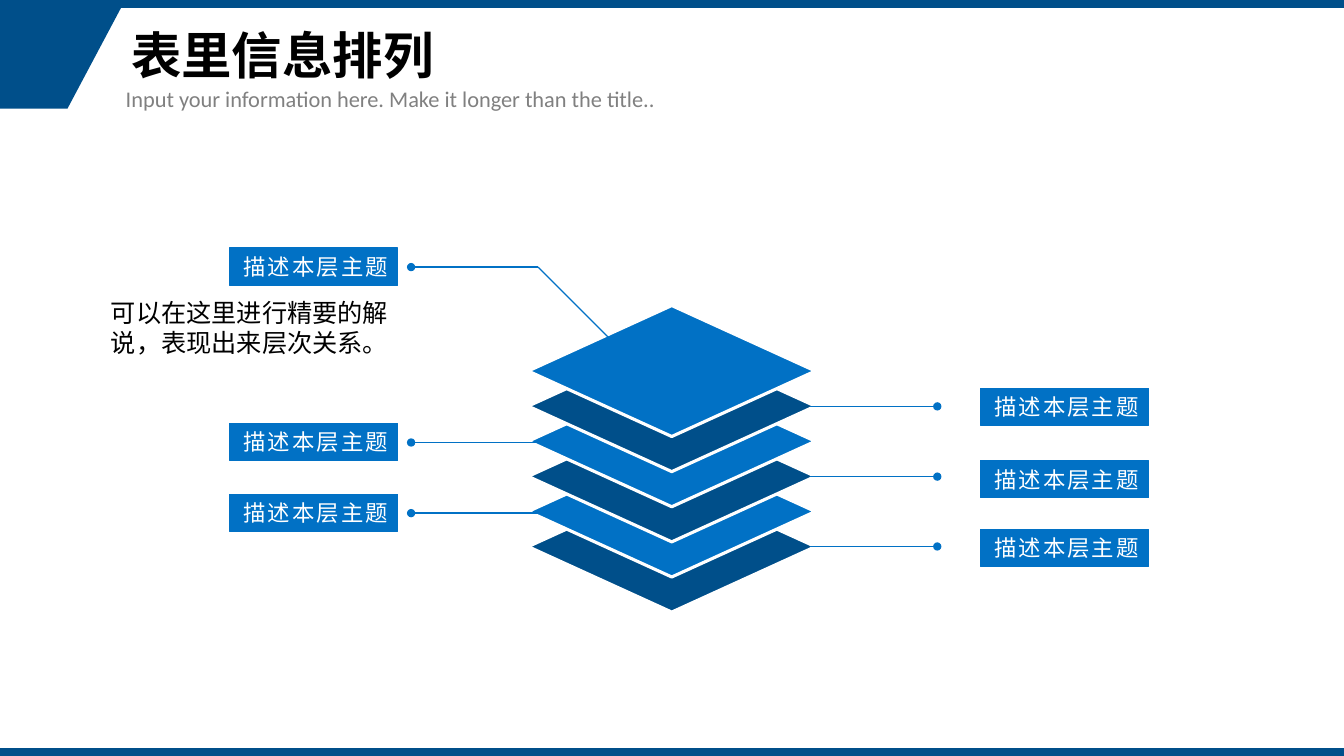
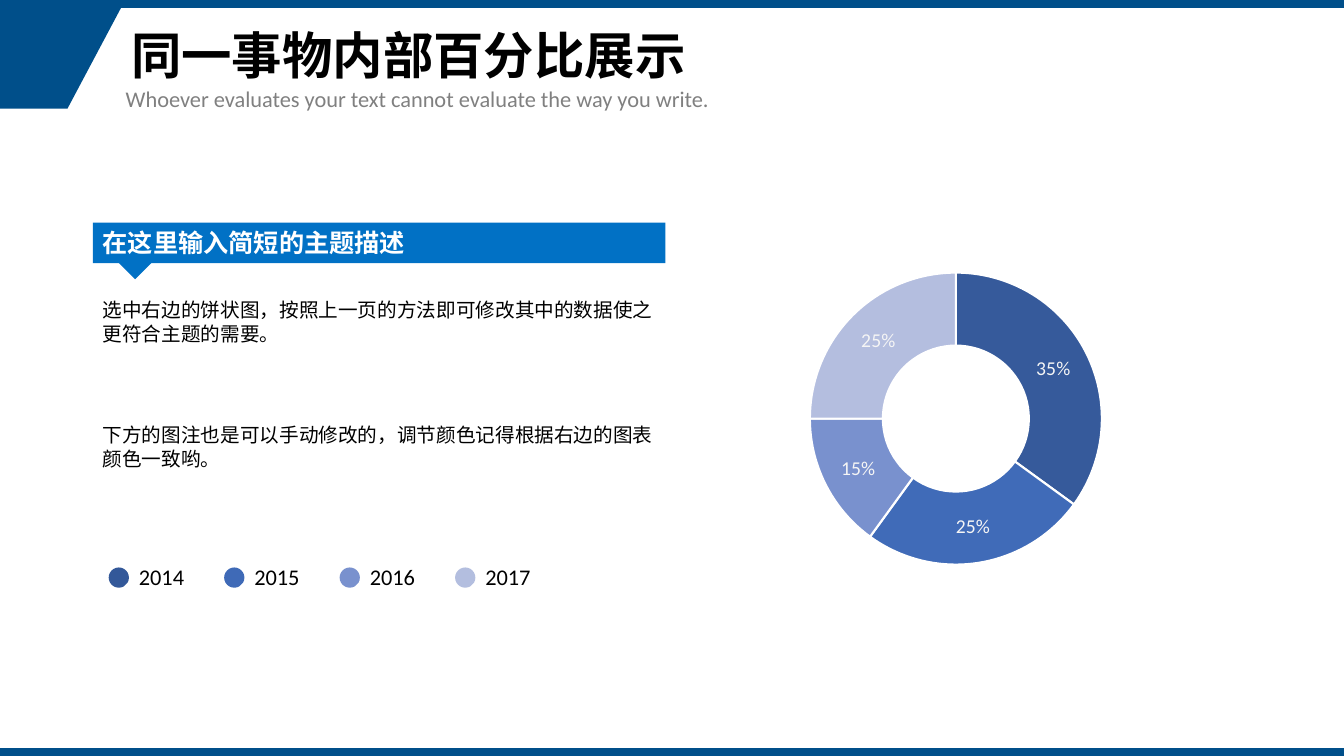
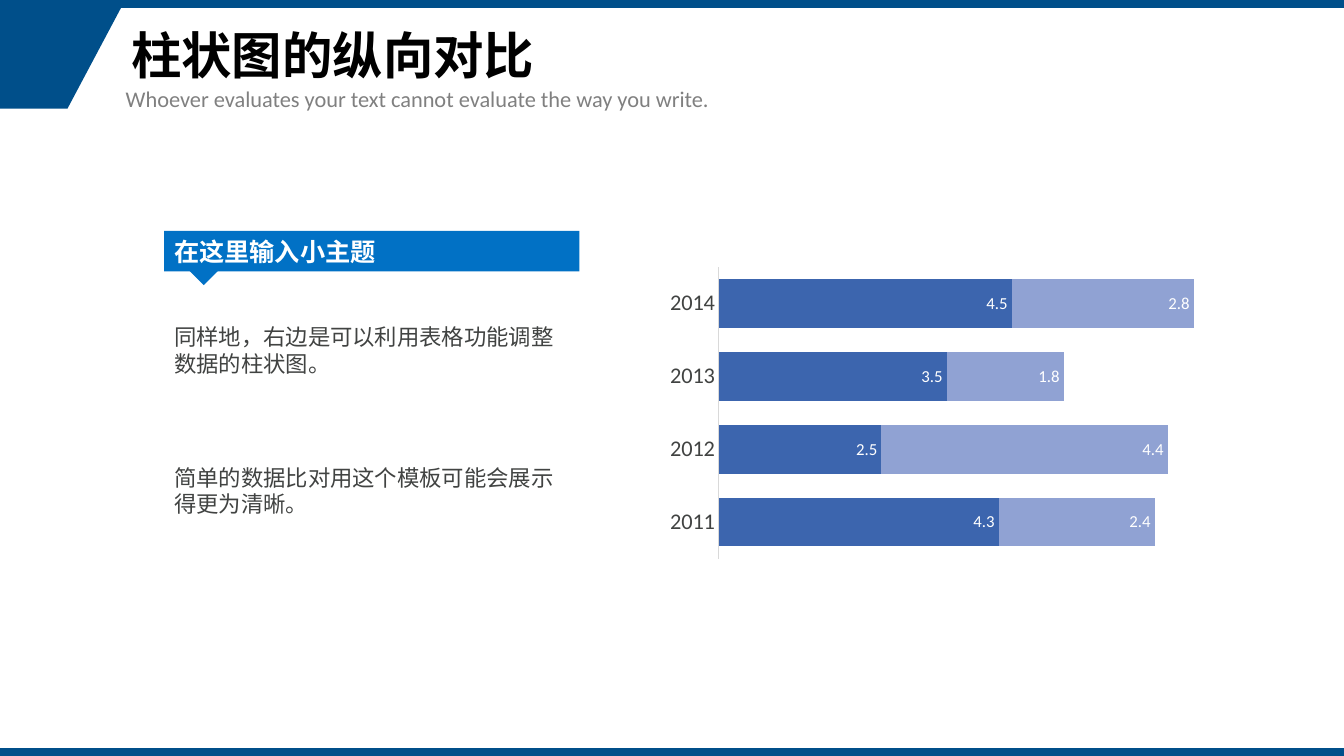
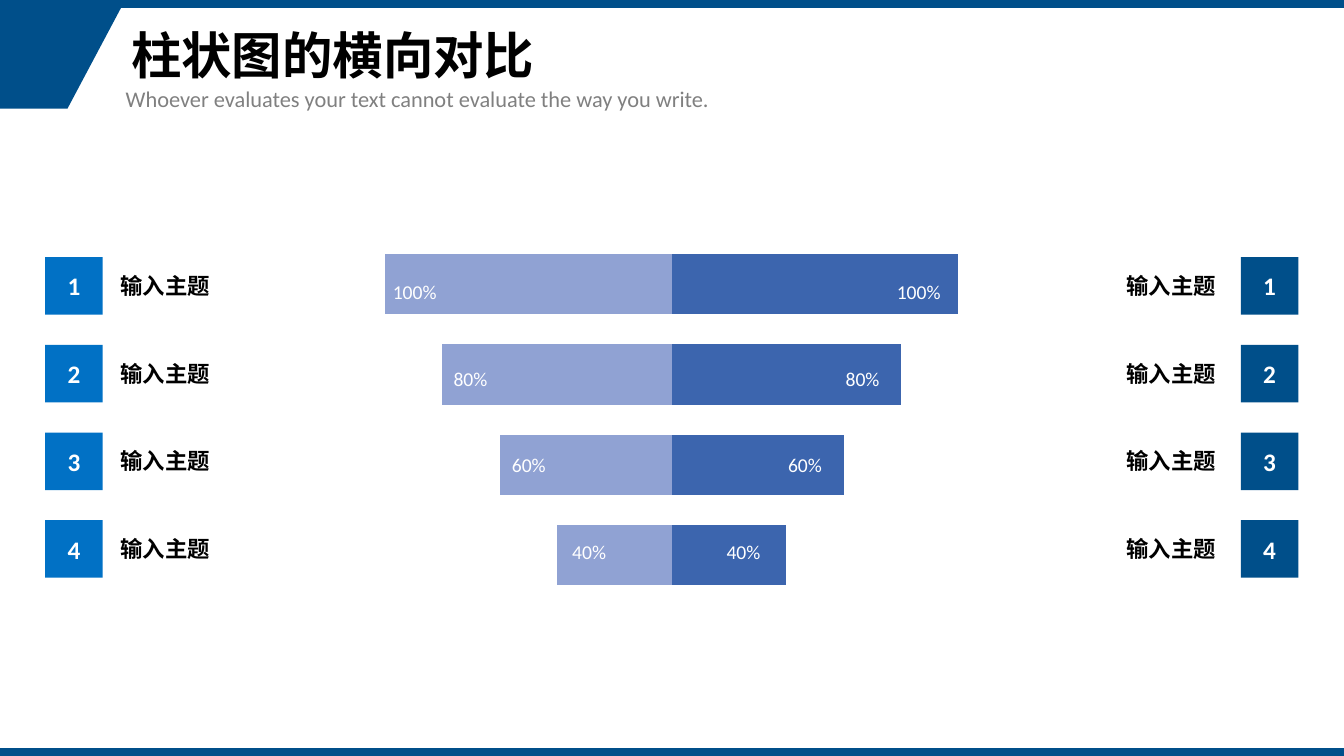
from dataclasses import dataclass
from lxml.etree import SubElement
from pptx import Presentation
from pptx.chart.data import CategoryChartData
from pptx.dml.color import RGBColor
from pptx.enum.chart import XL_CHART_TYPE, XL_LABEL_POSITION, XL_TICK_MARK
from pptx.enum.shapes import MSO_CONNECTOR, MSO_SHAPE
from pptx.enum.text import MSO_ANCHOR, MSO_AUTO_SIZE, PP_ALIGN
from pptx.oxml.ns import qn
from pptx.util import Cm, Pt


@dataclass(frozen=True)
class Theme:
    navy: str = "004F8A"
    blue: str = "0171C5"
    white: str = "FFFFFF"
    black: str = "000000"
    gray: str = "808080"
    ink: str = "414342"
    rule: str = "D9D9D9"
    pale: str = "F5F5F5"
    deep: str = "3C65AE"
    light: str = "90A2D3"
    pie: tuple = ("365A9B", "406BB8", "7991CE", "B4BEDF")
    dots: tuple = ("335899", "3F6AB7", "7991CE", "B3BEDF")
    latin: str = "Calibri"
    asian: str = "Noto Sans CJK SC"
    title: int = 36
    head: int = 18
    text: int = 16
    small: int = 14
    label: int = 12
    base: int = 10


look = Theme()
rgb = RGBColor.from_string


def put(slide, spot, kind=None, fill=None):
    spot = [Cm(part) for part in spot]
    if kind is None:
        return slide.shapes.add_textbox(*spot)
    shape = slide.shapes.add_shape(kind, *spot)
    shape.shadow.inherit = False
    shape.fill.solid()
    shape.fill.fore_color.rgb = rgb(fill)
    shape.line.fill.background()
    return shape


def write(shape, text, size, color, name=look.asian, bold=False,
          align=PP_ALIGN.LEFT, anchor=MSO_ANCHOR.TOP, wrap=True):
    frame = shape.text_frame
    frame.text = text
    para = frame.paragraphs[0]
    para.alignment = align
    run = para.runs[0]
    for key, val in {"word_wrap": wrap, "vertical_anchor": anchor,
                     "auto_size": MSO_AUTO_SIZE.NONE}.items():
        setattr(frame, key, val)
    for key, val in {"name": name, "size": Pt(size), "bold": bold}.items():
        setattr(run.font, key, val)
    run.font.color.rgb = rgb(color)
    for props in shape.element.iter(qn("a:rPr")):
        SubElement(props, qn("a:ea"), typeface=look.asian)
    return shape


deck = Presentation()
deck.slide_width, deck.slide_height = Cm(33.87), Cm(19.05)
layout = deck.slide_layouts[5]

hint = "Whoever evaluates your text cannot evaluate the way you write."
heads = (
    ("表里信息排列", "Input your information here. Make it longer than the title.."),
    ("同一事物内部百分比展示", hint),
    ("柱状图的纵向对比", hint),
    ("柱状图的横向对比", hint),
)
slides = []
for title, note in heads:
    slide = deck.slides.add_slide(layout)
    slides.append(slide)
    head = slide.shapes.title
    for key, val in {"left": 3.05, "top": 0.2, "width": 28.5, "height": 2.54}.items():
        setattr(head, key, Cm(val))
    write(head, title, look.title, look.black, bold=True, anchor=MSO_ANCHOR.MIDDLE)
    head.text_frame.paragraphs[0].line_spacing = 0.9
    write(put(slide, (2.92, 2.03, 19.81, 0.94)), note, look.text, look.gray, look.latin)

stack, ring, bars, pairs = slides

pen = stack.shapes.build_freeform(Cm(0), Cm(0.2))
pen.add_line_segments([(Cm(3.05), Cm(0.2)), (Cm(1.7), Cm(2.74)), (Cm(0), Cm(2.74))])
flag = pen.convert_to_shape()
flag.shadow.inherit = False
flag.fill.solid()
flag.fill.fore_color.rgb = rgb(look.navy)
flag.line.fill.background()
bands = [put(stack, (0, top, 33.87, 0.2), MSO_SHAPE.RECTANGLE, look.navy)
         for top in (0, 18.85)]
tree = layout.element.cSld.spTree
for spot, shape in enumerate([flag, *bands]):
    tree.insert(2 + spot, shape.element)

for tier in reversed(range(6)):
    tile = put(stack, (13.31, 7.7 + 0.885 * tier, 7.24, 3.3),
               MSO_SHAPE.FLOWCHART_DECISION, look.navy if tier % 2 else look.blue)
    tile.line.color.rgb = rgb(look.white)
    tile.line.width = Pt(2.25)

lines = [((13.56, 6.73), (16.1, 9.27), False)]
lines += [((13.56, y), (10.36, y), True) for y in (6.73, 11.15, 12.93)]
lines += [((20.42, y), (23.62, y), True) for y in (10.24, 12.01, 13.77)]
for start, end, dot in lines:
    link = stack.shapes.add_connector(
        MSO_CONNECTOR.STRAIGHT, *[Cm(part) for part in start + end])
    link.line.color.rgb = rgb(look.blue)
    link.line.width = Pt(1)
    props = link.element.spPr
    if dot:
        SubElement(props.find(qn("a:ln")), qn("a:tailEnd"), type="oval")
    SubElement(props, qn("a:effectLst"))

for left, tops in ((5.79, (6.25, 10.67, 12.45)), (24.71, (9.78, 11.61, 13.34))):
    for top in tops:
        tag = put(stack, (left, top, 4.24, 0.94), MSO_SHAPE.RECTANGLE, look.blue)
        tag.line.color.rgb = rgb(look.blue)
        tag.line.width = Pt(0.75)
        write(tag, "描述本层主题", look.text, look.white, align=PP_ALIGN.RIGHT, wrap=False)
        for props in tag.element.iter(qn("a:rPr")):
            props.set("spc", "150")
write(put(stack, (1.98, 7.37, 8.05, 1.8)), "可以在这里进行精要的解说，表现出来层次关系。",
      look.head, look.black, align=PP_ALIGN.RIGHT)

panels = (
    (ring, 2.34, 5.61, 14.43, (3.1, 6.3), "在这里输入简短的主题描述", look.small, look.black, (
        (7.39, "选中右边的饼状图，按照上一页的方法即可修改其中的数据使之更符合主题的需要。"),
        (10.54, "下方的图注也是可以手动修改的，调节颜色记得根据右边的图表颜色一致哟。"))),
    (bars, 4.14, 5.82, 10.46, (4.83, 6.45), "在这里输入小主题", look.text, look.ink, (
        (8.03, "同样地，右边是可以利用表格功能调整数据的柱状图。"),
        (11.56, "简单的数据比对用这个模板可能会展示得更为清晰。"))),
)
for slide, left, top, width, tip, head, size, color, notes in panels:
    write(put(slide, (left, top, width, 1.02), MSO_SHAPE.RECTANGLE, look.blue),
          head, look.head, look.white, bold=True)
    put(slide, (*tip, 0.61, 0.61), MSO_SHAPE.RIGHT_TRIANGLE, look.blue).rotation = 315
    for y, note in notes:
        write(put(slide, (left, y, width, 1.63)), note, size, color)

for spot, color in enumerate(look.dots):
    left = 2.74 + 2.91 * spot
    put(ring, (left, 14.3, 0.51, 0.51), MSO_SHAPE.OVAL, color)
    write(put(ring, (left + 0.51, 14.07, 1.68, 0.94)), str(2014 + spot),
          look.text, look.black, look.latin, wrap=False)

ranks = ("1", "2", "3", "4")
plans = (
    (ring, XL_CHART_TYPE.DOUGHNUT, (20.09, 6.55, 8, 8), ranks,
     ((0.35, 0.25, 0.15, 0.25),)),
    (bars, XL_CHART_TYPE.BAR_STACKED, (16.59, 6.58, 14.94, 7.65),
     ("2011", "2012", "2013", "2014"), ((4.3, 2.5, 3.5, 4.5), (2.4, 4.4, 1.8, 2.8))),
    (pairs, XL_CHART_TYPE.BAR_CLUSTERED, (5.64, 5.84, 22.58, 9.47), ranks,
     ((40, 60, 80, 100), (-40, -60, -80, -100))),
)
charts = []
for slide, kind, spot, cats, rows in plans:
    data = CategoryChartData()
    data.categories = cats
    for count, row in enumerate(rows, 1):
        data.add_series(f"Series {count}", row)
    chart = slide.shapes.add_chart(kind, *[Cm(part) for part in spot], data).chart
    chart.has_title = chart.has_legend = False
    chart.font.name = look.latin
    chart.font.size = Pt(look.base)
    chart.font.color.rgb = rgb(look.black)
    charts.append(chart)

pie, rows, twins = charts
plot = pie.plots[0]
for spot, color in enumerate(look.pie):
    point = plot.series[0].points[spot].format
    point.fill.solid()
    point.fill.fore_color.rgb = rgb(color)
    point.line.color.rgb = rgb(look.white)
    point.line.width = Pt(1.5)
plot.has_data_labels = True
tags = plot.data_labels
for key, val in {"show_value": True, "show_percentage": False,
                 "number_format": "0%", "number_format_is_linked": False}.items():
    setattr(tags, key, val)
tags.font.size = Pt(look.small)
tags.font.name = look.latin
tags.font.color.rgb = rgb(look.pale)
for hole in pie.element.iter(qn("c:holeSize")):
    hole.set("val", "35")
area = pie.element.find(".//" + qn("c:plotArea"))
for old in area.findall(qn("c:layout")):
    area.remove(old)
frame = SubElement(area, qn("c:layout"))
area.insert(0, frame)
frame = SubElement(frame, qn("c:manualLayout"))
for key, val in (("layoutTarget", "inner"), ("xMode", "edge"), ("yMode", "edge"),
                 ("x", "0.04"), ("y", "0.04"), ("w", "0.92"), ("h", "0.92")):
    SubElement(frame, qn("c:" + key), val=val)

for chart, low, high in ((rows, 0, 8), (twins, -150, 150)):
    plot = chart.plots[0]
    for key, val in {"gap_width": 50, "overlap": 100, "vary_by_categories": False}.items():
        setattr(plot, key, val)
    for key, val in {"visible": False, "has_major_gridlines": False,
                     "minimum_scale": low, "maximum_scale": high}.items():
        setattr(chart.value_axis, key, val)
    for series, color in zip(plot.series, (look.deep, look.light)):
        series.invert_if_negative = False
        series.format.fill.solid()
        series.format.fill.fore_color.rgb = rgb(color)

for series in rows.plots[0].series:
    tags = series.data_labels
    tags.show_value = True
    tags.position = XL_LABEL_POSITION.INSIDE_END
    tags.font.size = Pt(look.label)
    tags.font.name = look.latin
    tags.font.color.rgb = rgb(look.white)
axis = rows.category_axis
axis.major_tick_mark = XL_TICK_MARK.NONE
axis.format.line.color.rgb = rgb(look.rule)
axis.format.line.width = Pt(0.75)
axis.tick_labels.font.size = Pt(look.text)
axis.tick_labels.font.name = look.latin
axis.tick_labels.font.color.rgb = rgb(look.ink)
twins.category_axis.visible = False
twins.value_axis.tick_labels.number_format = "0%"
twins.value_axis.tick_labels.number_format_is_linked = False

sides = (
    (1.14, 2.79, look.blue, (9.65, 11.18, 12.65, 14.17)),
    (31.27, 28.14, look.navy, (22.35, 21.06, 19.61, 18.06)),
)
for left, near, color, marks in sides:
    for row, mark in enumerate(marks):
        top = 6.48 + 2.21 * row
        write(put(pairs, (left, top, 1.45, 1.45), MSO_SHAPE.RECTANGLE, color),
              str(row + 1), look.head, look.white, look.latin, True,
              PP_ALIGN.CENTER, MSO_ANCHOR.MIDDLE)
        write(put(pairs, (near, top + 0.25, 2.79, 0.94)), "输入主题",
              look.text, look.black, look.latin, True, wrap=False)
        write(put(pairs, (mark, 6.93 + 2.18 * row, 1.57 if row else 1.83, 0.86)),
              f"{100 - 20 * row}%", look.small, look.white, look.latin, wrap=False)

deck.save("out.pptx")
